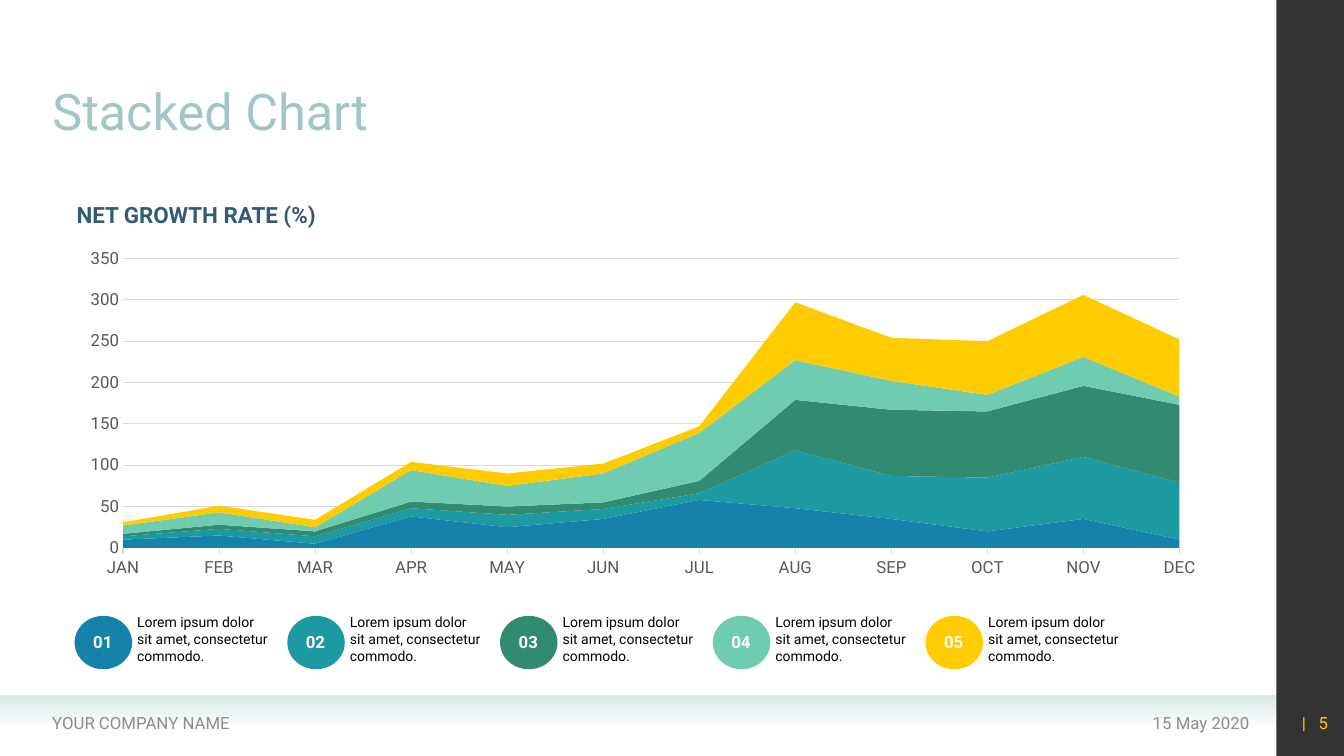
from dataclasses import dataclass

from lxml.etree import SubElement
from pptx import Presentation
from pptx.chart.data import CategoryChartData
from pptx.dml.color import RGBColor
from pptx.enum.chart import XL_CHART_TYPE, XL_TICK_MARK
from pptx.enum.shapes import MSO_SHAPE
from pptx.enum.text import MSO_ANCHOR, MSO_AUTO_SIZE, PP_ALIGN
from pptx.oxml import parse_xml
from pptx.oxml.ns import nsdecls, qn
from pptx.util import Inches, Pt


@dataclass(frozen=True)
class Theme:
    """Colours, font and type sizes of the slide."""
    font: str = "Roboto"
    title: str = "A0C7C5"
    heading: str = "335B74"
    body: str = "000000"
    footer: str = "8C8C8C"
    axis: str = "595959"
    grid: str = "D9D9D9"
    band: str = "D9E9E8"
    white: str = "FFFFFF"
    accent: str = "FFCC00"
    series: tuple = ("1482AB", "1D9AA1", "318B71", "70CCB1", "FFCC00")
    title_size: int = 36
    heading_size: int = 16
    label_size: int = 12
    body_size: int = 10


T = Theme()
MONTHS = "JAN FEB MAR APR MAY JUN JUL AUG SEP OCT NOV DEC".split()
LOWER = (10, 15, 5, 38, 25, 35, 58, 48, 35, 20, 35, 10)
UPPER = (4, 8, 9, 10, 15, 12, 8, 70, 52, 65, 75, 69)
MIDDLE = (3, 5, 6, 8, 10, 8, 15, 61, 80, 80, 86, 94)
GROWTH = (LOWER, UPPER, MIDDLE, LOWER, UPPER)
PLOT = {"x": 0.043, "y": 0.05, "w": 0.939, "h": 0.871}


def rgb(code):
    """Return the colour for a hex code."""
    return RGBColor.from_string(code)


def style(font, size, color, bold=False):
    """Set typeface, size, colour and weight of a font."""
    font.name, font.size, font.bold = T.font, Pt(size), bold
    font.color.rgb = rgb(color)


def write(s, text, size=T.label_size, color=T.body, bold=False,
          align=PP_ALIGN.LEFT, anchor=MSO_ANCHOR.TOP, inset=(0.1, 0.05)):
    """Write one formatted paragraph into a shape and return it."""
    tf = s.text_frame
    tf.word_wrap, tf.auto_size = True, MSO_AUTO_SIZE.NONE
    tf.vertical_anchor = anchor
    tf.margin_left = tf.margin_right = Inches(inset[0])
    tf.margin_top = tf.margin_bottom = Inches(inset[1])
    p = tf.paragraphs[0]
    p.alignment = align
    r = p.add_run()
    r.text = text
    style(r.font, size, color, bold)
    return p


def text_box(sp, x, y, w, h, text, **fmt):
    """Add a text box and return its paragraph."""
    box = sp.add_textbox(Inches(x), Inches(y), Inches(w), Inches(h))
    return write(box, text, **fmt)


def add_shape(sp, kind, x, y, w, h, color):
    """Add a plain filled shape without line or shadow."""
    s = sp.add_shape(kind, Inches(x), Inches(y), Inches(w), Inches(h))
    s.shadow.inherit = False
    s.line.fill.background()
    s.fill.solid()
    s.fill.fore_color.rgb = rgb(color)
    return s


def set_alpha(color, percent):
    """Set the opacity of an srgbClr element."""
    SubElement(color, qn("a:alpha")).set("val", str(percent * 1000))


def add_frame(sp, x, y, w, h):
    """Draw the footer band, the side bar and the footer texts."""
    bar = 0.67
    band = add_shape(sp, MSO_SHAPE.RECTANGLE, x, y + 6.9, w - bar, 0.31, T.band)
    band.fill.gradient()
    band.fill.gradient_angle = 270
    for stop in band.fill.gradient_stops:
        stop.color.rgb = rgb(T.band)
    set_alpha(list(band._element.spPr.iter(qn("a:srgbClr")))[-1], 0)
    side = add_shape(sp, MSO_SHAPE.RECTANGLE, x + w - bar, y, bar, h, T.body)
    set_alpha(next(side._element.spPr.iter(qn("a:srgbClr"))), 80)

    top = y + 6.97
    fmt = {"color": T.footer, "anchor": MSO_ANCHOR.MIDDLE}
    text_box(sp, x + 9.1, top, 3.39, 0.4, "15 May 2020", align=PP_ALIGN.RIGHT, **fmt)
    text_box(sp, x + 0.42, top, 4.9, 0.4, "YOUR COMPANY NAME", **fmt)
    fmt["color"] = T.accent
    p = text_box(sp, x + 12.6, top, 0.67, 0.4, "| ", align=PP_ALIGN.RIGHT, **fmt)
    p.runs[0].font._element.set("spc", "300")
    r = p.add_run()
    r.text = "5"
    style(r.font, T.label_size, T.accent)


def add_title(s, x, y, w, h):
    """Place and format the title placeholder."""
    title = s.shapes.title
    title.left, title.top, title.width, title.height = map(Inches, (x, y, w, h))
    p = write(title, "Stacked Chart", size=T.title_size, color=T.title,
              anchor=MSO_ANCHOR.BOTTOM)
    p.line_spacing = 0.9


def add_growth_chart(sp, x, y, w, h):
    """Draw the heading and the stacked area chart."""
    text_box(sp, x - 0.02, y, 5.17, 0.31, "NET GROWTH RATE (%)", size=T.heading_size,
             color=T.heading, bold=True, inset=(0.04, 0.02))
    data = CategoryChartData()
    data.categories = MONTHS
    for i, values in enumerate(GROWTH, 1):
        data.add_series(f"Series {i}", values)
    chart = sp.add_chart(XL_CHART_TYPE.AREA_STACKED, Inches(x), Inches(y + 0.42),
                         Inches(w), Inches(h - 0.42), data).chart
    chart.has_legend = chart.has_title = False
    style(chart.font, T.body_size, T.body)
    for series, color in zip(chart.plots[0].series, T.series):
        series.format.fill.solid()
        series.format.fill.fore_color.rgb = rgb(color)

    months, rates = chart.category_axis, chart.value_axis
    for axis in (months, rates):
        style(axis.tick_labels.font, T.label_size, T.axis)
        axis.minor_tick_mark = XL_TICK_MARK.NONE
    months.has_major_gridlines = False
    months.major_tick_mark = XL_TICK_MARK.OUTSIDE
    rates.major_tick_mark = XL_TICK_MARK.NONE
    rates.minimum_scale, rates.maximum_scale, rates.major_unit = 0, 350, 50
    rates.has_major_gridlines = True
    rates.format.line.fill.background()
    for line in (months.format.line, rates.major_gridlines.format.line):
        line.color.rgb, line.width = rgb(T.grid), Pt(0.75)

    for cross in chart._chartSpace.iter(qn("c:crossBetween")):
        cross.set("val", "midCat")
    area = chart._chartSpace.chart.plotArea
    for layout in area.findall(qn("c:layout")):
        area.remove(layout)
    modes = "".join(f'<c:{k}Mode val="edge"/>' for k in "xy")
    sizes = "".join(f'<c:{k} val="{v}"/>' for k, v in PLOT.items())
    area.insert(0, parse_xml(
        f'<c:layout {nsdecls("c")}><c:manualLayout><c:layoutTarget val="inner"/>'
        f'{modes}{sizes}</c:manualLayout></c:layout>'))


def add_legend(sp, x, y, pitch):
    """Draw the row of numbered circles with their captions."""
    for i, color in enumerate(T.series):
        left = x + i * pitch
        add_shape(sp, MSO_SHAPE.OVAL, left, y + 0.04, 0.57, 0.53, color)
        text_box(sp, left + 0.08, y + 0.15, 0.4, 0.3, f"{i + 1:02}", color=T.white,
                 bold=True, align=PP_ALIGN.CENTER, anchor=MSO_ANCHOR.MIDDLE,
                 inset=(0, 0))
        text_box(sp, left + 0.58, y, 1.41, 0.55,
                 "Lorem ipsum dolor sit amet, consectetur commodo.",
                 size=T.body_size, inset=(0.04, 0.02))


def main():
    """Build the slide and save it."""
    prs = Presentation()
    prs.slide_width, prs.slide_height = Inches(13.33), Inches(7.5)
    s = prs.slides.add_slide(prs.slide_layouts[5])
    add_frame(s.shapes, 0, 0, 13.33, 7.5)
    add_title(s, 0.42, 0.2, 11.21, 1.25)
    add_growth_chart(s.shapes, 0.74, 1.98, 11.16, 3.75)
    add_legend(s.shapes, 0.74, 6.07, 2.11)
    prs.save("out.pptx")


if __name__ == "__main__":
    main()
